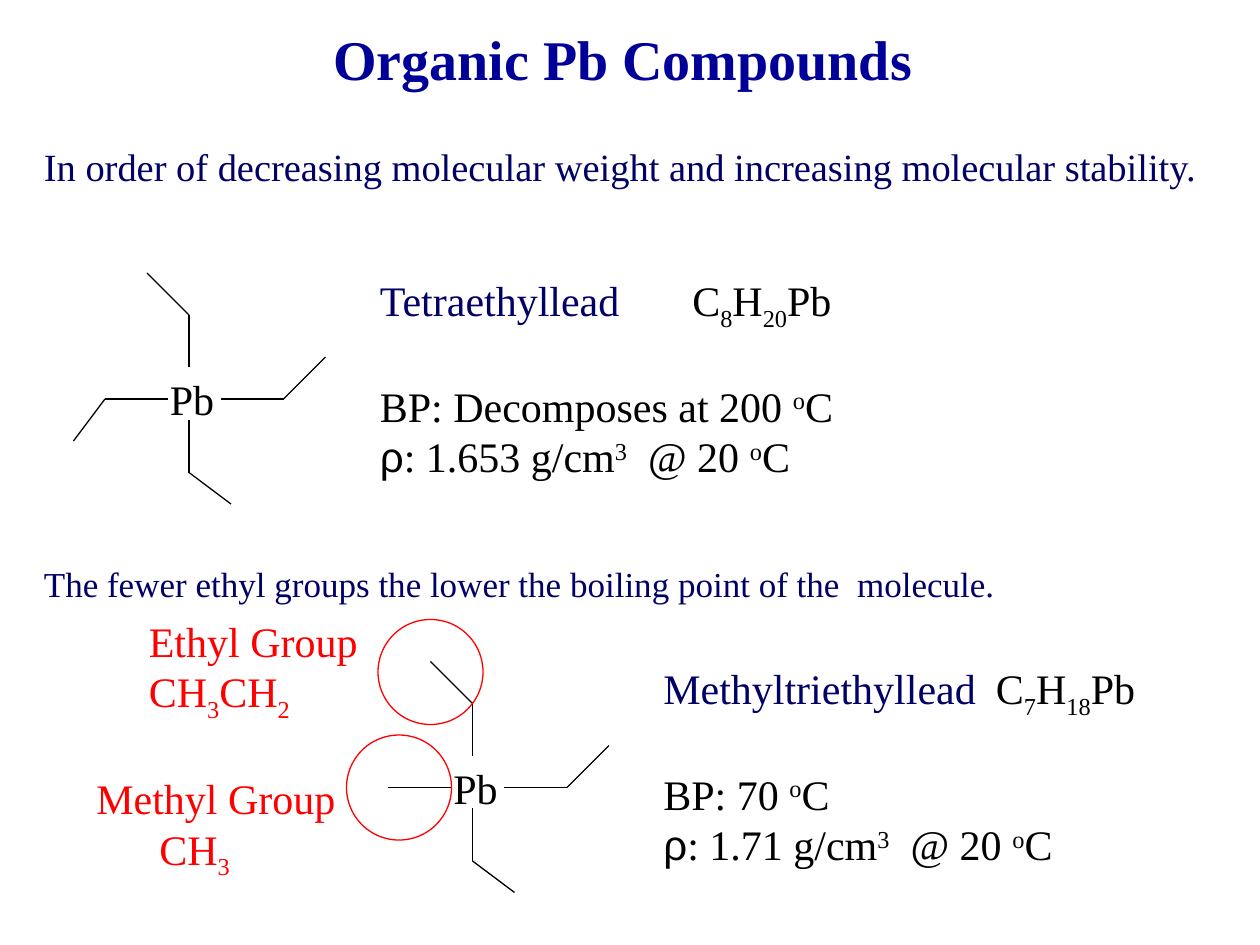
"""Build a slide on organic lead compounds."""
from lxml.etree import SubElement
from pptx import Presentation
from pptx.dml.color import RGBColor
from pptx.enum.shapes import MSO_CONNECTOR, MSO_SHAPE
from pptx.enum.text import MSO_ANCHOR, MSO_AUTO_SIZE, PP_ALIGN
from pptx.oxml.ns import qn
from pptx.util import Pt

FONT = "Times New Roman"
NAVY, BLACK, RED = "000066", "000000", "FF0000"
BASELINES = {"_": "-25000", "^": "30000"}
CORE_BONDS = [
    (0, -48, 0, -18), (0, 12, 0, 42), (18, 0, 54, 0), (-48, 0, -12, 0),
    (-24, -72, 0, -48), (24, 60, 0, 42), (54, 0, 78, -24),
]
LEFT_ETHYL_END = (-66, 24, -48, 0)


def rgb(value):
    return RGBColor.from_string(value)


class SlideBuilder:
    def __init__(self, slide):
        self.slide = slide

    def format_run(self, run, size, color, bold=False):
        run.font.name = "Arial" if run.text == "ρ" else FONT
        run.font.size = Pt(size)
        run.font.bold = bold
        run.font.color.rgb = rgb(color)

    def title(self, text):
        shape = self.slide.shapes.title
        shape.left, shape.top, shape.width, shape.height = Pt(50), Pt(0), Pt(612), Pt(66)
        frame = shape.text_frame
        frame.text = text
        frame.vertical_anchor = MSO_ANCHOR.MIDDLE
        paragraph = frame.paragraphs[0]
        paragraph.alignment = PP_ALIGN.CENTER
        self.format_run(paragraph.runs[0], 32, "000099", bold=True)

    def text(self, left, top, width, height, lines, color, size=24):
        """Write lines whose runs are split by |, with _ for subscript and ^ for superscript."""
        shape = self.slide.shapes.add_textbox(Pt(left), Pt(top), Pt(width), Pt(height))
        frame = shape.text_frame
        frame.word_wrap = False
        frame.auto_size = MSO_AUTO_SIZE.SHAPE_TO_FIT_TEXT
        for index, line in enumerate(lines):
            paragraph = frame.add_paragraph() if index else frame.paragraphs[0]
            for part in line.split("|"):
                run = paragraph.add_run()
                run.text = part.lstrip("_^")
                self.format_run(run, size, color)
                if part[0] in BASELINES:
                    run._r.get_or_add_rPr().set("baseline", BASELINES[part[0]])
        return frame

    def line(self, start_x, start_y, end_x, end_y):
        connector = self.slide.shapes.add_connector(
            MSO_CONNECTOR.STRAIGHT, Pt(start_x), Pt(start_y), Pt(end_x), Pt(end_y))
        connector.line.color.rgb = rgb(BLACK)
        connector.line.width = Pt(0.75)
        SubElement(connector._element.spPr, qn("a:effectLst"))

    def circle(self, left, top, diameter):
        shape = self.slide.shapes.add_shape(
            MSO_SHAPE.OVAL, Pt(left), Pt(top), Pt(diameter), Pt(diameter))
        shape.shadow.inherit = False
        shape.fill.background()
        shape.line.color.rgb = rgb(RED)
        shape.line.width = Pt(0.75)

    def molecule(self, center_x, center_y, bonds):
        self.text(center_x - 18, center_y - 18, 39.6, 36, ["Pb"], BLACK)
        for start_x, start_y, end_x, end_y in bonds:
            self.line(center_x + start_x, center_y + start_y,
                      center_x + end_x, center_y + end_y)

    def compound(self, left, top, width, name, formula, formula_tab, boiling_point, density):
        lines = [
            f"{name}|\t{formula}",
            f"BP: {boiling_point} |^o|C",
            f"ρ|: {density} g/cm|^3|  @ 20 |^o|C",
        ]
        frame = self.text(left, top, width, 122.4, lines, BLACK)
        heading, boiling = frame.paragraphs[:2]
        heading.runs[0].font.color.rgb = rgb(NAVY)
        tabs = SubElement(heading._p.get_or_add_pPr(), qn("a:tabLst"))
        SubElement(tabs, qn("a:tab"), pos=str(Pt(formula_tab)), algn="l")
        boiling.space_before = Pt(27.6)


def main():
    presentation = Presentation()
    presentation.slide_width, presentation.slide_height = Pt(720), Pt(540)
    builder = SlideBuilder(presentation.slides.add_slide(presentation.slide_layouts[5]))

    builder.title("Organic Pb Compounds")
    builder.text(18, 78, 675.4, 33.8, [
        "In order of decreasing molecular weight and increasing molecular stability."], NAVY, 22)
    builder.molecule(108, 228, CORE_BONDS + [LEFT_ETHYL_END])
    builder.compound(210, 153.4, 277.2, "Tetraethyllead", "C|_8|H|_20|Pb", 178.5,
                     "Decomposes at 200", "1.653")

    builder.text(18, 318, 562.3, 31.7, [
        "The fewer ethyl groups the lower the boiling point of the  molecule."], NAVY, 20)
    builder.molecule(270, 450, CORE_BONDS)
    builder.compound(372, 375.1, 287.3, "Methyltriethyllead", "C|_7|H|_18|Pb", 190,
                     "70", "1.71")

    builder.circle(198, 420, 60)
    builder.circle(216, 354, 60)
    builder.text(48, 438, 151.2, 64.8, ["Methyl Group", "\tCH|_3"], RED)
    builder.text(78, 348, 133.9, 64.8, ["Ethyl Group", "CH|_3|CH|_2"], RED)

    presentation.save("out.pptx")


if __name__ == "__main__":
    main()
